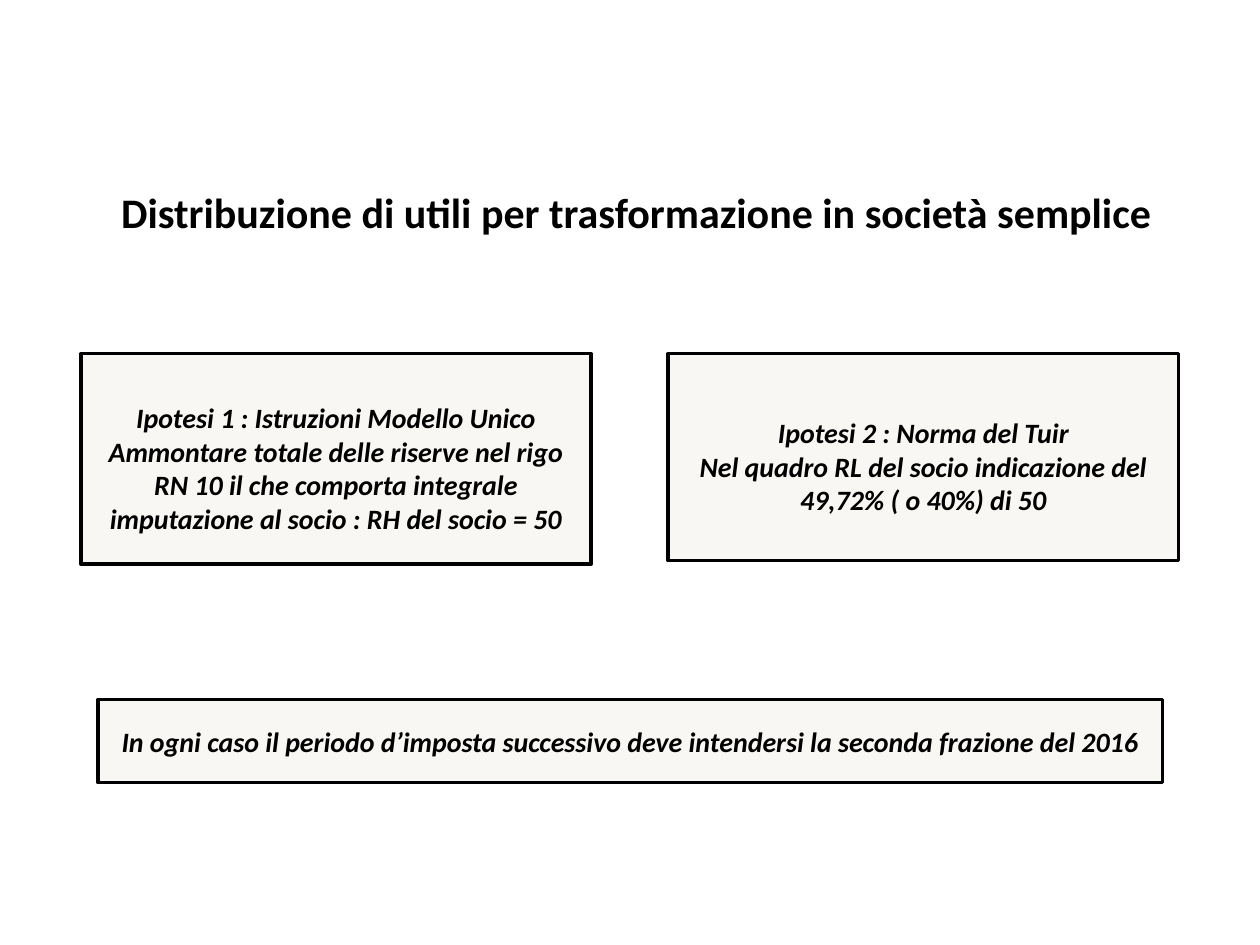
from pptx import Presentation
from pptx.dml.color import RGBColor
from pptx.enum.shapes import MSO_SHAPE
from pptx.enum.text import MSO_ANCHOR, PP_ALIGN
from pptx.util import Cm, Pt


def color(hex_value):
    return RGBColor.from_string(hex_value)


def apply_format(target, values):
    for name, value in values.items():
        setattr(target, name, value)


class SlideBuilder:
    """Holds the style and the slide being built."""

    INK = "000000"
    PANEL = "F8F7F3"
    TITLE_FONT = {"name": "Calibri", "size": Pt(24), "bold": True}
    PANEL_FONT = {"name": "Calibri", "size": Pt(16), "bold": True, "italic": True}
    FRAME = {"word_wrap": True, "vertical_anchor": MSO_ANCHOR.MIDDLE}

    def __init__(self, slide):
        self.slide = slide

    def add_lines(self, frame, lines, font):
        apply_format(frame, self.FRAME)
        for index, line in enumerate(lines):
            paragraph = frame.paragraphs[0] if index == 0 else frame.add_paragraph()
            paragraph.alignment = PP_ALIGN.CENTER
            run = paragraph.add_run()
            run.text = line
            apply_format(run.font, font)
            run.font.color.rgb = color(self.INK)

    def title(self, text, left, top, width, height):
        heading = self.slide.shapes.add_textbox(Cm(left), Cm(top), Cm(width), Cm(height))
        self.add_lines(heading.text_frame, [text], self.TITLE_FONT)

    def panel(self, lines, left, top, width, height, margin_top=0.13):
        panel = self.slide.shapes.add_shape(
            MSO_SHAPE.RECTANGLE, Cm(left), Cm(top), Cm(width), Cm(height))
        panel.shadow.inherit = False
        panel.fill.solid()
        panel.fill.fore_color.rgb = color(self.PANEL)
        panel.line.color.rgb = color(self.INK)
        panel.line.width = Pt(2)
        panel.text_frame.margin_top = Cm(margin_top)
        self.add_lines(panel.text_frame, lines, self.PANEL_FONT)


def main():
    presentation = Presentation()
    presentation.slide_width, presentation.slide_height = Cm(25.4), Cm(19.05)
    builder = SlideBuilder(presentation.slides.add_slide(presentation.slide_layouts[6]))

    builder.title("Distribuzione di utili per trasformazione in società semplice",
                  0.64, 3.5, 24.38, 1.52)

    hypotheses = [
        (4.24, ["Ipotesi 1 : Istruzioni Modello Unico",
                "Ammontare totale delle riserve nel rigo RN 10 il che comporta "
                "integrale imputazione al socio : RH del socio = 50"]),
        (4.17, ["Ipotesi 2 : Norma del Tuir",
                "Nel quadro RL del socio indicazione del 49,72% ( o 40%) di 50"]),
    ]
    for column, (height, lines) in enumerate(hypotheses):
        builder.panel(lines, 1.63 + column * 11.84, 7.13, 10.29, height, margin_top=0.48)

    builder.panel(["In ogni caso il periodo d’imposta successivo deve intendersi "
                   "la seconda frazione del 2016"], 1.98, 14.1, 21.46, 1.68)

    presentation.save("out.pptx")


if __name__ == "__main__":
    main()
